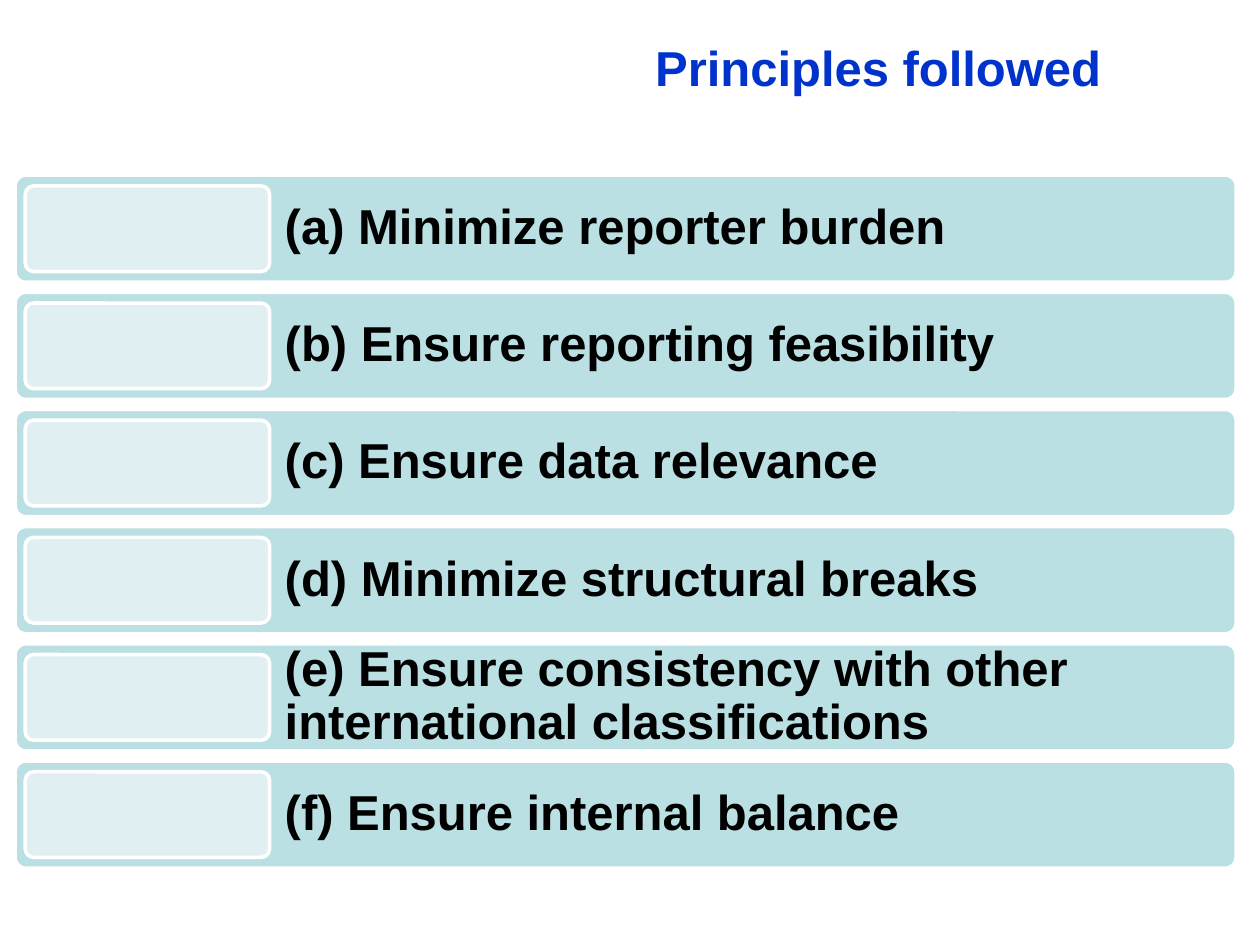
"""Build the slide that lists the principles followed."""
import pptx
import pptx.util
import pptx.dml.color
import pptx.enum.shapes
import pptx.enum.text

COLORS = {"title": "0033CC", "band": "BBE0E3", "tab": "E0F0F2",
          "edge": "FFFFFF", "text": "000000"}
PRINCIPLES = [
    "(a) Minimize reporter burden",
    "(b) Ensure reporting feasibility",
    "(c) Ensure data relevance",
    "(d) Minimize structural breaks",
    "(e) Ensure consistency with other international classifications",
    "(f) Ensure internal balance",
]
TOP_INCHES, PITCH_INCHES, BAND_INCHES = 1.39, 0.93, 0.85
FIRST_ROW, ROW_PITCH, ROW_HEIGHT = (
    inches / 7.5 for inches in (TOP_INCHES, PITCH_INCHES, BAND_INCHES))
TAB_INSET, TAB_HEIGHT = 0.1 * ROW_HEIGHT, 0.8 * ROW_HEIGHT


def rgb(name):
    """Return the named colour."""
    return pptx.dml.color.RGBColor.from_string(COLORS[name])


class PrincipleSlide:
    """Hold the style and the current slide; lengths are shares of its size."""

    def __init__(self, deck):
        """Add a title-only slide to the deck."""
        self.width, self.height = deck.slide_width, deck.slide_height
        self.slide = deck.slides.add_slide(deck.slide_layouts[5])
        self.font = {"name": "Arial", "size": pptx.util.Pt(28), "bold": True}
        self.diagram = None

    def area(self, left, top, width, height):
        """Turn shares of the slide into lengths."""
        return (int(left * self.width), int(top * self.height),
                int(width * self.width), int(height * self.height))

    def set_text(self, frame, text, color, alignment, margin):
        """Put one styled paragraph in a text frame."""
        layout = {"word_wrap": True,
                  "auto_size": pptx.enum.text.MSO_AUTO_SIZE.NONE,
                  "vertical_anchor": pptx.enum.text.MSO_ANCHOR.MIDDLE}
        layout.update({f"margin_{side}": pptx.util.Inches(margin)
                       for side in ("left", "top", "right", "bottom")})
        for key, value in layout.items():
            setattr(frame, key, value)
        paragraph = frame.paragraphs[0]
        paragraph.alignment = alignment
        run = paragraph.add_run()
        run.text = text
        for key, value in self.font.items():
            setattr(run.font, key, value)
        run.font.color.rgb = rgb(color)
        return paragraph

    def title(self, text, *shares):
        """Move and fill the title placeholder."""
        heading = self.slide.shapes.title
        for key, value in zip(("left", "top", "width", "height"), self.area(*shares)):
            setattr(heading, key, value)
        self.set_text(heading.text_frame, text, "title",
                      pptx.enum.text.PP_ALIGN.CENTER, 0.05)

    def start_diagram(self):
        """Open the group that holds the rows."""
        self.diagram = self.slide.shapes.add_group_shape()

    def panel(self, color, *shares):
        """Draw a rounded panel with a white edge."""
        panel = self.diagram.shapes.add_shape(
            pptx.enum.shapes.MSO_SHAPE.ROUNDED_RECTANGLE, *self.area(*shares))
        panel.adjustments[0] = 0.1
        panel.shadow.inherit = False
        panel.fill.solid()
        panel.fill.fore_color.rgb = rgb(color)
        panel.line.color.rgb = rgb("edge")
        panel.line.width = pptx.util.Pt(2)

    def label(self, text, *shares):
        """Add the wording of a principle."""
        box = self.diagram.shapes.add_textbox(*self.area(*shares))
        paragraph = self.set_text(box.text_frame, text, "text",
                                  pptx.enum.text.PP_ALIGN.LEFT, 0.12)
        paragraph.line_spacing = 0.9

    def row(self, index, text):
        """Draw one principle as a band, its label and a blank tab."""
        top = FIRST_ROW + index * ROW_PITCH
        self.panel("band", 0.012, top, 0.969, ROW_HEIGHT)
        self.label(text, 0.214, top, 0.766, ROW_HEIGHT)
        self.panel("tab", 0.02, top + TAB_INSET, 0.194, TAB_HEIGHT)


def main():
    """Build and save the deck."""
    deck = pptx.Presentation()
    deck.slide_width = pptx.util.Inches(10)
    deck.slide_height = pptx.util.Inches(7.5)
    page = PrincipleSlide(deck)
    page.title("Principles followed", 0.39, 0.033, 0.614, 0.076)
    page.start_diagram()
    for index, principle in enumerate(PRINCIPLES):
        page.row(index, principle)
    deck.save("out.pptx")


if __name__ == "__main__":
    main()
